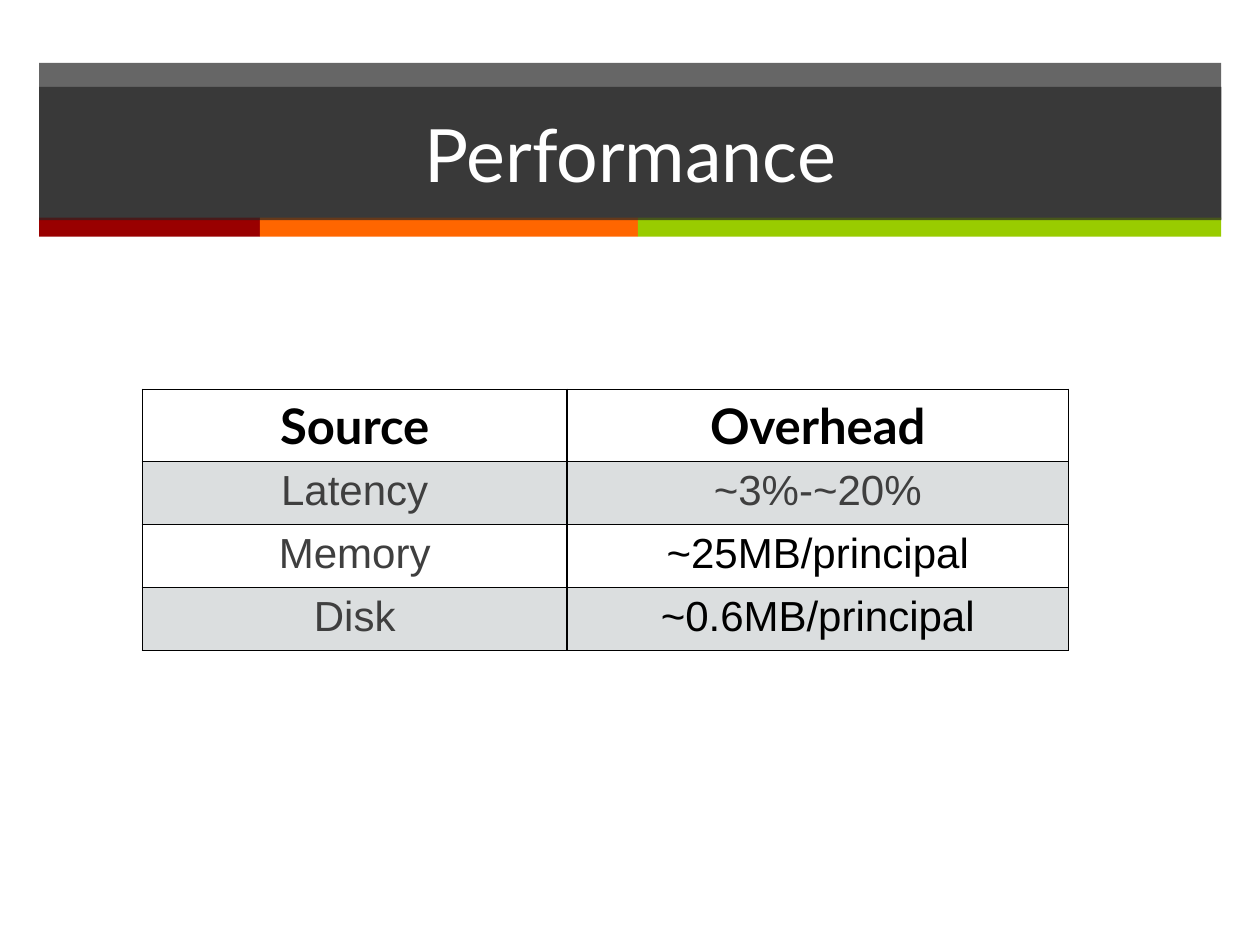
from dataclasses import dataclass

from lxml import etree
from pptx import Presentation
from pptx.dml.color import RGBColor
from pptx.enum.shapes import MSO_SHAPE
from pptx.enum.text import MSO_ANCHOR, PP_ALIGN
from pptx.oxml.ns import qn
from pptx.util import Cm, Pt

RECT = MSO_SHAPE.RECTANGLE
CENTER = PP_ALIGN.CENTER
MIDDLE = MSO_ANCHOR.MIDDLE
TITLE_ONLY = 5


@dataclass(frozen=True)
class Theme:
    band: str = "262626"
    band_opacity: int = 70
    stripes: tuple = ("990000", "FF6600", "99CC00")
    white: str = "FFFFFF"
    black: str = "000000"
    grey_text: str = "3F3F3F"
    row_shade: str = "DBDEDF"
    heading_font: str = "Lato"
    body_font: str = "Arial"
    title_size: int = 42
    header_size: int = 28
    body_size: int = 24
    border: int = 1


class SlideBuilder:
    def __init__(self, prs, theme):
        self.theme = theme
        self.s = prs.slides.add_slide(prs.slide_layouts[TITLE_ONLY])

    def fill(self, target, color, opacity=100):
        target.fill.solid()
        target.fill.fore_color.rgb = RGBColor.from_string(color)
        if opacity < 100:
            clr = target.fill._xPr.find(".//" + qn("a:srgbClr"))
            etree.SubElement(clr, qn("a:alpha"), val=str(opacity * 1000))

    def text(self, tf, text, font, size, color, bold=False):
        tf.text = text
        p = tf.paragraphs[0]
        p.alignment = CENTER
        r = p.runs[0]
        r.font.name = font
        r.font.size = Pt(size)
        r.font.bold = bold
        r.font.color.rgb = RGBColor.from_string(color)

    def bar(self, left, top, width, height, color, opacity=100):
        sp = self.s.shapes.add_shape(RECT, Cm(left), Cm(top), Cm(width), Cm(height))
        sp.shadow.inherit = False
        sp.line.fill.background()
        self.fill(sp, color, opacity)

    def title(self, text, left, top, width, height):
        t = self.theme
        sp = self.s.shapes.title
        sp.left, sp.top, sp.width, sp.height = Cm(left), Cm(top), Cm(width), Cm(height)
        self.fill(sp, t.band, t.band_opacity)
        sp.text_frame.vertical_anchor = MIDDLE
        self.text(sp.text_frame, text, t.heading_font, t.title_size, t.white)
        # Keep the title in front of the band
        self.s.shapes._spTree.append(sp._element)

    def cell_borders(self, cell):
        tc_pr = cell._tc.get_or_add_tcPr()
        for side in ("lnL", "lnR", "lnT", "lnB"):
            ln = etree.SubElement(tc_pr, qn("a:" + side), w=str(Pt(self.theme.border)))
            solid = etree.SubElement(ln, qn("a:solidFill"))
            etree.SubElement(solid, qn("a:srgbClr"), val=self.theme.black)

    def table(self, rows, left, top, col_widths, row_heights):
        t = self.theme
        frame = self.s.shapes.add_table(
            len(rows), len(col_widths), Cm(left), Cm(top),
            Cm(sum(col_widths)), Cm(sum(row_heights)))
        table = frame.table
        table.first_row = table.horz_banding = False
        for column, width in zip(table.columns, col_widths):
            column.width = Cm(width)
        for i, (values, height) in enumerate(zip(rows, row_heights)):
            table.rows[i].height = Cm(height)
            for j, (value, color) in enumerate(values):
                cell = table.cell(i, j)
                self.cell_borders(cell)
                if i % 2:
                    self.fill(cell, t.row_shade)
                else:
                    cell.fill.background()
                if i == 0:
                    style = (t.heading_font, t.header_size, color, True)
                else:
                    style = (t.body_font, t.body_size, color)
                self.text(cell.text_frame, value, *style)


def main():
    prs = Presentation()
    prs.slide_width, prs.slide_height = Cm(25.4), Cm(19.05)
    theme = Theme()
    slide = SlideBuilder(prs, theme)

    # Header band with coloured stripes
    left, width = 0.79, 23.83
    slide.bar(left, 1.27, width, 3.15, theme.band, theme.band_opacity)
    x = left
    for color, stripe_width in zip(theme.stripes, (4.45, 7.62, 11.76)):
        slide.bar(x, 4.39, stripe_width, 0.38, color)
        x += stripe_width
    slide.title("Performance", left, 1.75, width, 2.69)

    # Overhead table
    black, grey = theme.black, theme.grey_text
    rows = [
        [("Source", black), ("Overhead", black)],
        [("Latency", grey), ("~3%-~20%", grey)],
        [("Memory", grey), ("~25MB/principal", black)],
        [("Disk", grey), ("~0.6MB/principal", black)],
    ]
    slide.table(rows, 2.87, 7.85, (8.56, 10.11), (1.45, 1.27, 1.27, 1.27))

    prs.save("out.pptx")


if __name__ == "__main__":
    main()
